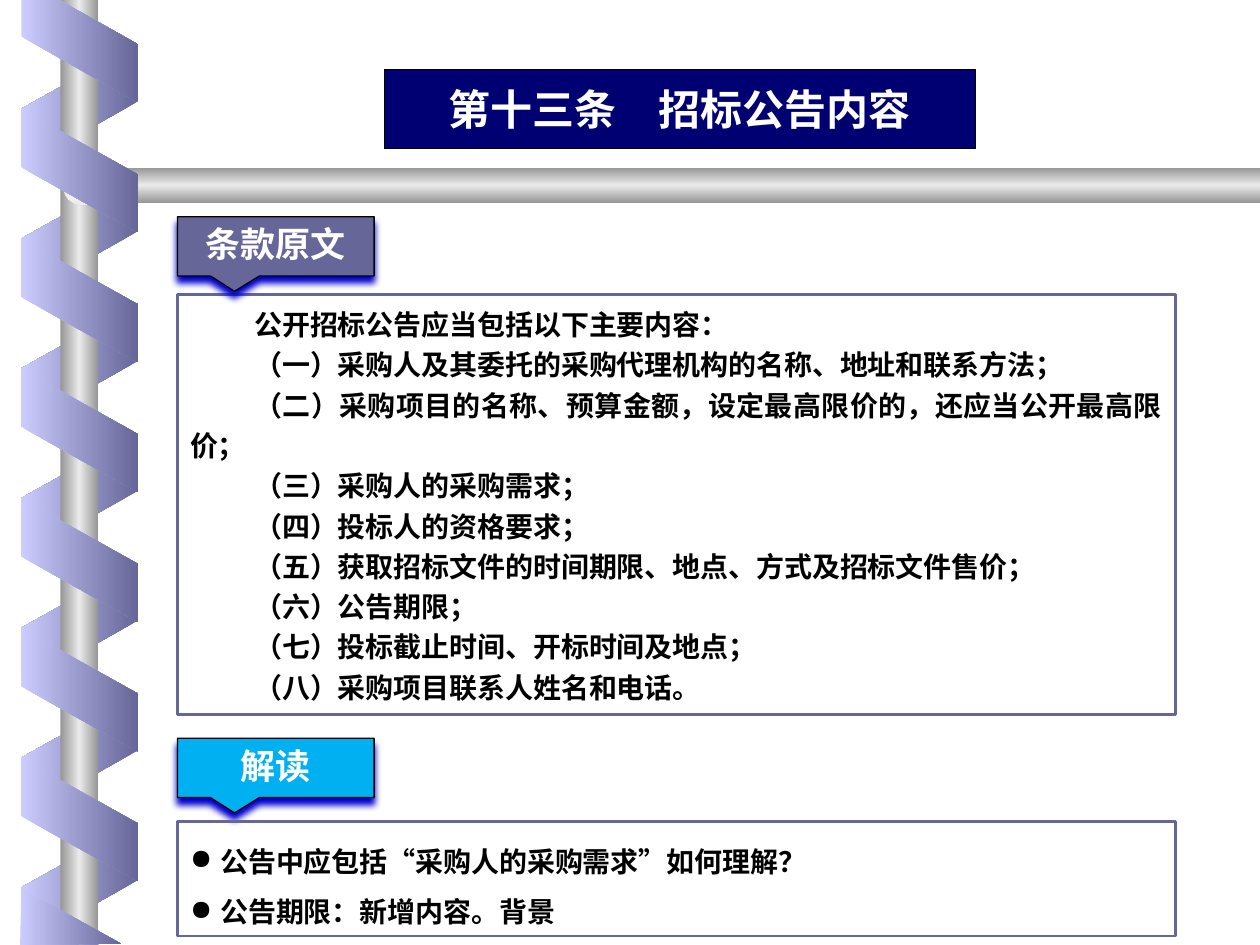
from copy import deepcopy

from lxml.etree import SubElement
from pptx import Presentation
from pptx.dml.color import RGBColor
from pptx.enum.shapes import MSO_SHAPE as SHAPE
from pptx.enum.text import MSO_ANCHOR as ANCHOR, MSO_AUTO_SIZE as AUTO, PP_ALIGN as ALIGN
from pptx.oxml.ns import qn
from pptx.util import Inches, Pt

BLACK = RGBColor(0x00, 0x00, 0x00)
WHITE = RGBColor(0xFF, 0xFF, 0xFF)
NAVY = RGBColor(0x00, 0x00, 0x73)
PURPLE = RGBColor(0x66, 0x66, 0x99)
LILAC = RGBColor(0xCC, 0xCC, 0xFF)
SKY = RGBColor(0x00, 0xB0, 0xF0)
STEEL = RGBColor(0x96, 0x96, 0x96)
SILVER = RGBColor(0xEA, 0xEA, 0xEA)
PEARL = RGBColor(0xFE, 0xFF, 0xFF)
SHADOW = "0000CC"

CJK = "Noto Sans CJK SC"
SERIF = "Times New Roman"
BODY_FONT = {"name": CJK, "size": Pt(16), "bold": True}
TITLE_FONT = {"name": SERIF, "size": Pt(24), "bold": True}
LABEL_FONT = {"name": SERIF, "size": Pt(20), "bold": True}

ARTICLE = [
    "公开招标公告应当包括以下主要内容：",
    "（一）采购人及其委托的采购代理机构的名称、地址和联系方法；",
    "（二）采购项目的名称、预算金额，设定最高限价的，还应当公开最高限价；",
    "（三）采购人的采购需求；",
    "（四）投标人的资格要求；",
    "（五）获取招标文件的时间期限、地点、方式及招标文件售价；",
    "（六）公告期限；",
    "（七）投标截止时间、开标时间及地点；",
    "（八）采购项目联系人姓名和电话。",
]
NOTES = ["公告中应包括“采购人的采购需求”如何理解？", "公告期限：新增内容。背景"]
TOP_TWIST = [(0.17, 0), (0.17, 0.29), (1.09, 0.81), (1.09, 0.35), (0.47, 0)]
BOTTOM_TWIST = [(0.96, 7.49), (0.17, 7.05), (0.16, 7.5)]


def add_box(slide, kind, box, adj=()):
    """Add a preset shape without shadow, fill or line."""
    s = slide.shapes.add_shape(kind, *map(Inches, box))
    s.shadow.inherit = False
    s.fill.background()
    s.line.fill.background()
    for i, value in enumerate(adj):
        s.adjustments[i] = value
    return s


def set_gradient(s, colors, angle=0):
    """Fill a shape with evenly spaced colours that ignore its rotation."""
    s.fill.gradient()
    s.fill.gradient_angle = angle
    grad = s._element.spPr.find(qn("a:gradFill"))
    grad.set("rotWithShape", "0")
    stops = grad.find(qn("a:gsLst"))
    for _ in colors[2:]:
        stops.append(deepcopy(stops[0]))
    for i, (stop, color) in enumerate(zip(s.fill.gradient_stops, colors)):
        stop.color.rgb = color
        stop.position = i / (len(colors) - 1)
    return grad


def flip(s):
    """Mirror a shape from left to right."""
    s._element.spPr.find(qn("a:xfrm")).set("flipH", "1")


def add_ribbon(slide, top, behind):
    """Add one turn of the spiral, behind or in front of the pole."""
    s = add_box(slide, SHAPE.PARALLELOGRAM, (0.14, top, 0.98, 0.93), [0.56])
    s.rotation = 90 if behind else 270
    if behind:
        flip(s)
    set_gradient(s, [PURPLE, LILAC] if behind else [LILAC, PURPLE])


def add_twist(slide, points):
    """Add a cut-off turn of the spiral at a slide edge."""
    pts = [(Inches(x), Inches(y)) for x, y in points]
    builder = slide.shapes.build_freeform(*pts[0])
    builder.add_line_segments(pts[1:], close=True)
    s = builder.convert_to_shape()
    s.shadow.inherit = False
    s.line.fill.background()
    set_gradient(s, [LILAC, PURPLE])


def add_binding(slide):
    """Add the spiral wound round a pole, with the crossbar."""
    for i in range(7):
        add_ribbon(slide, 0.37 + 1.03 * i, True)
    metal = [STEEL, SILVER, STEEL]
    set_gradient(add_box(slide, SHAPE.RECTANGLE, (0.48, 0, 0.3, 7.5)), metal)
    bar = add_box(slide, SHAPE.PENTAGON, (0.6, 1.33, 9.4, 0.28), [0.59])
    flip(bar)
    set_gradient(bar, metal, 270)
    joint = add_box(slide, SHAPE.OVAL, (0.5, 1.33, 0.32, 0.3))
    grad = set_gradient(joint, [PEARL, SILVER])
    grad.remove(grad.find(qn("a:lin")))
    center = SubElement(grad, qn("a:path"), path="shape")
    SubElement(center, qn("a:fillToRect"), dict.fromkeys("ltrb", "50000"))
    for i in range(6):
        add_ribbon(slide, 0.89 + 1.03 * i, False)
    for points in (TOP_TWIST, BOTTOM_TWIST):
        add_twist(slide, points)


def set_outline(s, color, width):
    """Draw a solid line round a shape."""
    s.line.color.rgb = color
    s.line.width = Pt(width)


def write(p, text, font, color, align):
    """Put one formatted run in a paragraph."""
    p.alignment = align
    r = p.add_run()
    r.text = text
    for name, value in font.items():
        setattr(r.font, name, value)
    r.font.color.rgb = color
    SubElement(r._r.get_or_add_rPr(), qn("a:ea"), typeface=CJK)


def add_title(slide, text, box):
    """Turn the title placeholder into an arrow-shaped banner."""
    s = slide.shapes.title
    s.left, s.top, s.width, s.height = map(Inches, box)
    geom = SubElement(s._element.spPr, qn("a:prstGeom"), prst="homePlate")
    SubElement(geom, qn("a:avLst"))
    s.fill.solid()
    s.fill.fore_color.rgb = NAVY
    set_outline(s, BLACK, 0.75)
    tf = s.text_frame
    tf.auto_size = AUTO.NONE
    tf.vertical_anchor = ANCHOR.MIDDLE
    write(tf.paragraphs[0], text, TITLE_FONT, WHITE, ALIGN.CENTER)


def add_label(slide, text, top, color):
    """Add a section callout with a coloured shadow."""
    s = add_box(slide, SHAPE.RECTANGULAR_CALLOUT, (1.41, top, 1.56, 0.47), [-0.21, 0.76])
    s.fill.solid()
    s.fill.fore_color.rgb = color
    set_outline(s, BLACK, 0.75)
    effects = s._element.spPr.find(qn("a:effectLst"))
    shadow = SubElement(effects, qn("a:outerShdw"), blurRad=str(Pt(4)), dist=str(Pt(4)),
                        dir="5400000", algn="t", rotWithShape="0")
    SubElement(shadow, qn("a:srgbClr"), val=SHADOW)
    tf = s.text_frame
    tf.vertical_anchor = ANCHOR.TOP
    write(tf.paragraphs[0], text, LABEL_FONT, WHITE, ALIGN.CENTER)


def add_panel(slide, lines, top, height, spacing, margin, indent, bullet=None):
    """Add an outlined panel of justified paragraphs."""
    s = add_box(slide, SHAPE.RECTANGLE, (1.41, top, 7.92, height))
    set_outline(s, PURPLE, 1.5)
    tf = s.text_frame
    tf.word_wrap = True
    tf.auto_size = AUTO.SHAPE_TO_FIT_TEXT
    tf.vertical_anchor = ANCHOR.TOP
    for i, line in enumerate(lines):
        p = tf.add_paragraph() if i else tf.paragraphs[0]
        p.line_spacing = spacing
        pPr = p._p.get_or_add_pPr()
        pPr.set("marL", str(Inches(margin)))
        pPr.set("indent", str(Inches(indent)))
        if bullet:
            SubElement(pPr, qn("a:buChar"), char=bullet)
        write(p, line, BODY_FONT, BLACK, ALIGN.JUSTIFY)


def main():
    """Build the slide and save it."""
    prs = Presentation()
    prs.slide_width, prs.slide_height = Inches(10), Inches(7.5)
    slide = prs.slides.add_slide(prs.slide_layouts[5])
    add_binding(slide)
    add_panel(slide, ARTICLE, 2.34, 3.33, 1.2, 0, 0.51)
    add_title(slide, "第十三条　招标公告内容", (3.05, 0.55, 4.69, 0.63))
    add_label(slide, "条款原文", 1.72, PURPLE)
    add_label(slide, "解读", 5.86, SKY)
    add_panel(slide, NOTES, 6.52, 0.91, 1.5, 0.24, -0.24, "●")
    prs.save("out.pptx")


if __name__ == "__main__":
    main()
